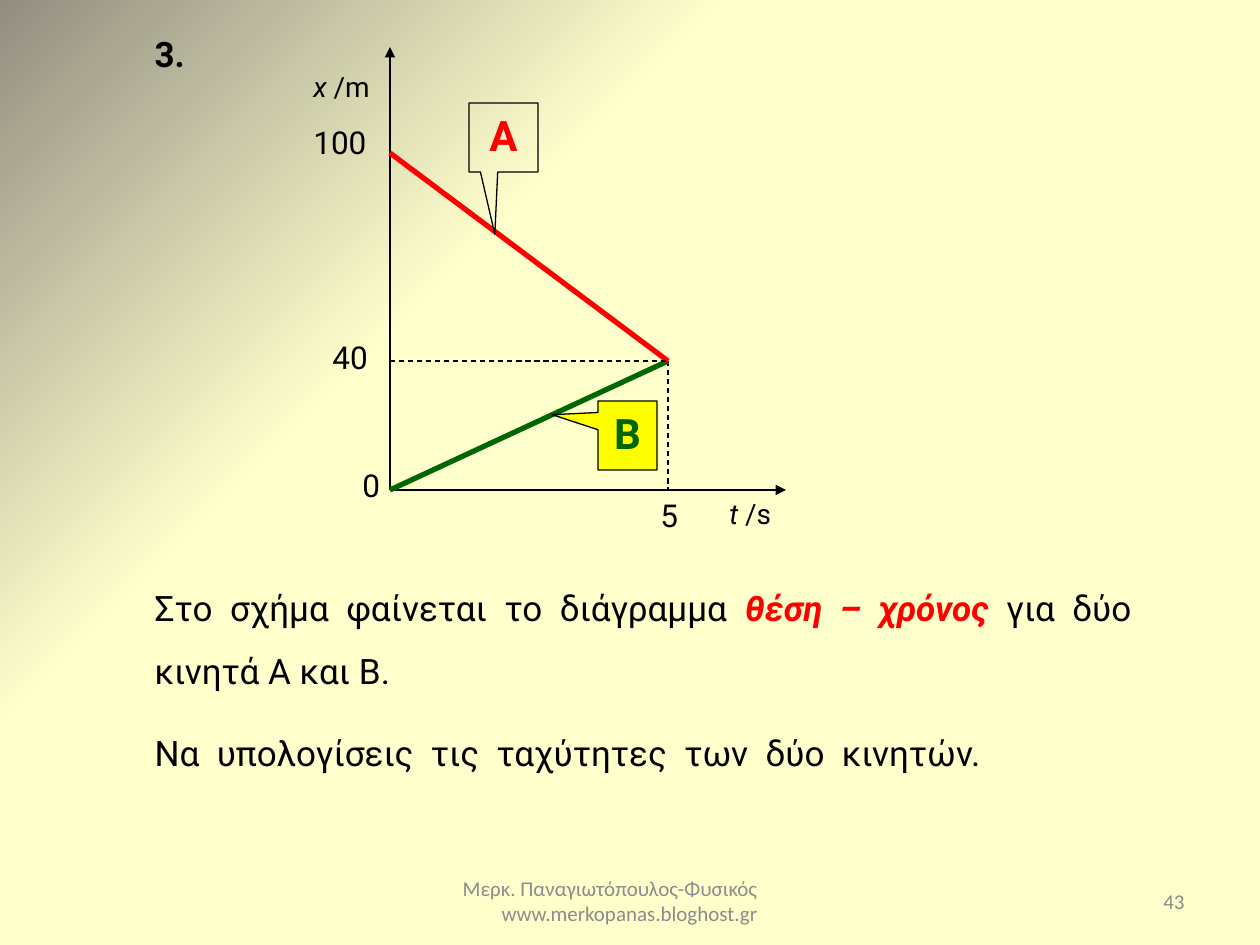
from dataclasses import dataclass
from lxml.etree import SubElement
from pptx import Presentation
from pptx.dml.color import RGBColor
from pptx.enum.dml import MSO_LINE
from pptx.enum.shapes import MSO_CONNECTOR, MSO_SHAPE
from pptx.enum.text import MSO_ANCHOR as Anchor, MSO_AUTO_SIZE, PP_ALIGN as Align
from pptx.oxml import parse_xml
from pptx.oxml.ns import nsdecls, qn
from pptx.util import Emu, Pt


@dataclass(frozen=True)
class Theme:
    font: str = "Roboto"
    footer_font: str = "Calibri"
    ink: str = "000000"
    red: str = "FF0000"
    green: str = "006600"
    yellow: str = "FFFF00"
    grey: str = "8C8C8C"
    paper: str = "FFFFCC"
    corner: str = "918E81"
    footer: int = 12
    axis: int = 16
    tick: int = 18
    body: int = 20
    callout: int = 24
    thin: float = 0.75
    medium: float = 1.5
    thick: float = 3


T = Theme()
PX = 914400 / 126

# Content: a run is (text, colour, style), style holding "b" and/or "i"
NUMBER = [("3.", T.ink, "b")]
PROBLEM = [
    [("Στο σχήμα φαίνεται το διάγραμμα ", T.ink, ""),
     ("θέση – χρόνος ", T.red, "bi"),
     ("για δύο κινητά Α και Β.", T.ink, "")],
    [("Να  υπολογίσεις  τις  ταχύτητες  των  δύο  κινητών.", T.ink, "")],
]
FOOTER = ["Μερκ. Παναγιωτόπουλος-Φυσικός", "www.merkopanas.bloghost.gr"]
PAGE = "43"

# Graph positions, px
TIME = {0: 390, 5: 668}
PLACE = {0: 490, 40: 361, 100: 153}
X_TIP, Y_TIP = 786, 47
ORIGIN = (TIME[0], PLACE[0])
MEETING = (TIME[5], PLACE[40])

# Start, end, colour, width, dashed, arrow
LINES = [
    (MEETING, (TIME[5], PLACE[0]), T.ink, T.thin, True, False),
    (ORIGIN, (TIME[0], Y_TIP), T.ink, T.medium, False, True),
    (ORIGIN, (X_TIP, PLACE[0]), T.ink, T.medium, False, True),
    (ORIGIN, MEETING, T.green, T.thick, False, False),
    ((TIME[0], PLACE[100]), MEETING, T.red, T.thick, False, False),
    ((TIME[0], PLACE[40]), MEETING, T.ink, T.thin, True, False),
]
AXIS_NAMES = [("x", " /m", (301, 63, 100, 47)), ("t", " /s", (717, 490, 90, 47))]
TICKS = [("100", (301, 117, 89, 50)), ("40", (320, 332, 69, 50)),
         ("0", (350, 460, 59, 50)), ("5", (648, 490, 39, 50))]
# Letter, box, pointer offset, fill, letter colour
CALLOUTS = [("A", (469, 103, 69, 69), (-0.125, 1.403), None, T.red),
            ("B", (598, 401, 59, 69), (-1.276, -0.301), T.yellow, T.green)]


def px(*values):
    return [Emu(round(v * PX)) for v in values]


def rgb(code):
    return RGBColor.from_string(code)


def add_runs(paragraph, runs, size, font=T.font):
    for text, colour, style in runs:
        run = paragraph.add_run()
        run.text = text
        run.font.name, run.font.size = font, Pt(size)
        run.font.bold, run.font.italic = "b" in style, "i" in style
        run.font.color.rgb = rgb(colour)


def set_frame(shape, anchor=Anchor.TOP):
    frame = shape.text_frame
    frame.word_wrap = True
    frame.auto_size = MSO_AUTO_SIZE.NONE
    frame.vertical_anchor = anchor
    return frame


def add_label(slide, box, runs, size, align=Align.LEFT, anchor=Anchor.TOP, font=T.font):
    frame = set_frame(slide.shapes.add_textbox(*px(*box)), anchor)
    paragraph = frame.paragraphs[0]
    paragraph.alignment = align
    add_runs(paragraph, runs, size, font)
    return frame


def place(shape, box):
    shape.left, shape.top, shape.width, shape.height = px(*box)


def add_line(slide, start, end, colour, width, dashed, arrow):
    line = slide.shapes.add_connector(MSO_CONNECTOR.STRAIGHT, *px(*start, *end))
    line.line.color.rgb = rgb(colour)
    line.line.width = Pt(width)
    if dashed:
        line.line.dash_style = MSO_LINE.DASH
    props = line._element.spPr
    if arrow:
        SubElement(props.find(qn("a:ln")), qn("a:tailEnd"), type="triangle")
    SubElement(props, qn("a:effectLst"))


def add_callout(slide, letter, box, pointer, fill, colour):
    callout = slide.shapes.add_shape(MSO_SHAPE.RECTANGULAR_CALLOUT, *px(*box))
    callout.adjustments[0], callout.adjustments[1] = pointer
    callout.shadow.inherit = False
    if fill:
        callout.fill.solid()
        callout.fill.fore_color.rgb = rgb(fill)
    else:
        callout.fill.background()
    callout.line.color.rgb = rgb(T.ink)
    callout.line.width = Pt(T.thin)
    paragraph = set_frame(callout).paragraphs[0]
    paragraph.alignment = Align.CENTER
    add_runs(paragraph, [(letter, colour, "b")], T.callout)


def set_background(slide):
    stops = "".join(f'<a:gs pos="{pos}000"><a:srgbClr val="{colour}"/></a:gs>'
                    for pos, colour in ((0, T.paper), (67, T.paper), (100, T.corner)))
    slide._element.cSld.insert(0, parse_xml(
        f'<p:bg {nsdecls("p", "a")}><p:bgPr><a:gradFill rotWithShape="1">'
        f'<a:gsLst>{stops}</a:gsLst><a:path path="circle">'
        '<a:fillToRect l="100000" t="100000"/></a:path></a:gradFill>'
        '<a:effectLst/></p:bgPr></p:bg>'))


def main():
    deck = Presentation()
    deck.slide_width, deck.slide_height = px(1260, 945)
    slide = deck.slides.add_slide(deck.slide_layouts[1])
    set_background(slide)

    # Exercise number
    number = slide.shapes.title
    place(number, (142, 26, 79, 55))
    heading = set_frame(number).paragraphs[0]
    heading.alignment = Align.LEFT
    add_runs(heading, NUMBER, T.body)

    # Problem text
    problem = slide.placeholders[1]
    place(problem, (142, 559, 1002, 217))
    frame = set_frame(problem)
    for i, runs in enumerate(PROBLEM):
        paragraph = frame.add_paragraph() if i else frame.paragraphs[0]
        paragraph.alignment = Align.JUSTIFY
        paragraph.line_spacing = 1.5
        paragraph.space_before = Pt(11)
        props = paragraph._p.get_or_add_pPr()
        props.set("marL", "0")
        props.set("indent", "0")
        SubElement(props, qn("a:buNone"))
        add_runs(paragraph, runs, T.body)

    # Position-time graph
    for line in LINES:
        add_line(slide, *line)
    for symbol, unit, box in AXIS_NAMES:
        add_label(slide, box, [(symbol, T.ink, "i"), (unit, T.ink, "")], T.axis)
    for value, box in TICKS:
        add_label(slide, box, [(value, T.ink, "")], T.tick)
    for callout in CALLOUTS:
        add_callout(slide, *callout)

    # Footer and page number
    author, site = ([(text, T.grey, "")] for text in FOOTER)
    credit = add_label(slide, (431, 876, 339, 50), author, T.footer,
                       Align.RIGHT, Anchor.MIDDLE, T.footer_font).paragraphs[0]
    credit.add_line_break()
    add_runs(credit, site, T.footer, T.footer_font)
    add_label(slide, (903, 876, 294, 50), [(PAGE, T.grey, "")], T.footer,
              Align.RIGHT, Anchor.MIDDLE, T.footer_font)

    deck.save("out.pptx")


if __name__ == "__main__":
    main()
